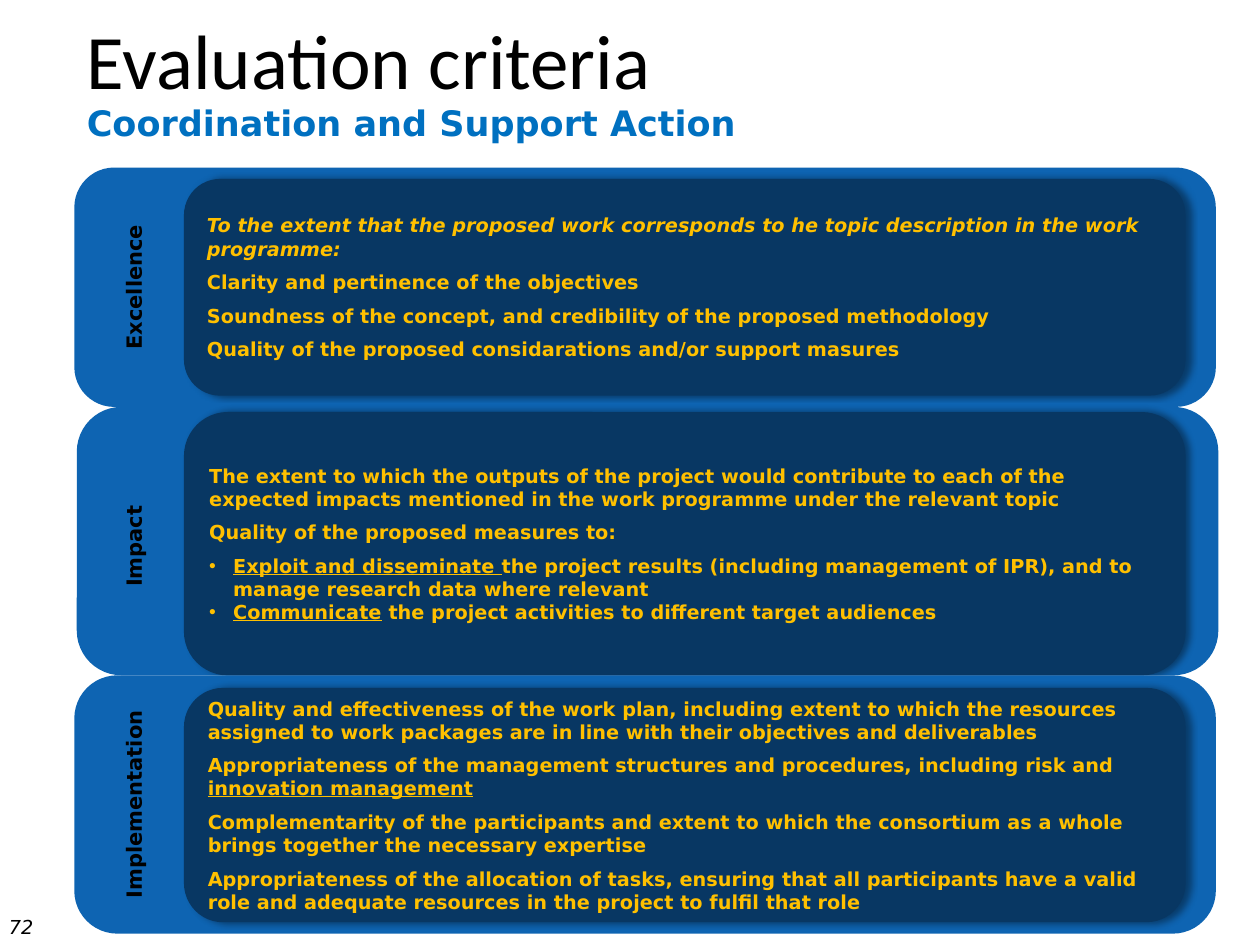
from lxml import etree
from pptx import Presentation
from pptx.dml.color import RGBColor
from pptx.enum.shapes import MSO_SHAPE
from pptx.enum.text import MSO_ANCHOR, PP_ALIGN
from pptx.oxml.ns import qn
from pptx.util import Inches, Pt

ROUNDED = MSO_SHAPE.ROUNDED_RECTANGLE
TOP, MIDDLE, BOTTOM = MSO_ANCHOR.TOP, MSO_ANCHOR.MIDDLE, MSO_ANCHOR.BOTTOM
LEFT, CENTER = PP_ALIGN.LEFT, PP_ALIGN.CENTER

TITLE = "Evaluation criteria"
SUBTITLE = "Coordination and Support Action"
PAGE_NUMBER = "72"

# Each paragraph is (style, text); text between underscores is underlined.
CRITERIA = [
    {"name": "Excellence", "left": 0.59, "height": 1.90,
     "panel_offset": 0.09, "panel_height": 1.72, "label_offset": 0,
     "text": [
         ("italic", "To the extent that the proposed work corresponds to he topic "
                    "description in the work programme:"),
         ("plain", "Clarity and pertinence of the objectives"),
         ("plain", "Soundness of the concept, and credibility of the proposed methodology"),
         ("plain", "Quality of the proposed considarations and/or support masures"),
     ]},
    {"name": "Impact", "left": 0.61, "height": 2.13,
     "panel_offset": 0.04, "panel_height": 2.09, "label_offset": 0.04,
     "text": [
         ("plain", "The extent to which the outputs of the project would contribute to each "
                   "of the expected impacts mentioned in the work programme under the "
                   "relevant topic"),
         ("plain", "Quality of the proposed measures to:"),
         ("first bullet", "_Exploit and disseminate _the project results (including management "
                          "of IPR), and to manage research data where relevant"),
         ("bullet", "_Communicate_ the project activities to different target audiences"),
     ]},
    {"name": "Implementation", "left": 0.59, "height": 2.05,
     "panel_offset": 0.10, "panel_height": 1.86, "label_offset": 0,
     "text": [
         ("plain", "Quality and effectiveness of the work plan, including extent to which the "
                   "resources assigned to work packages are in line with their objectives "
                   "and deliverables"),
         ("plain", "Appropriateness of the management structures and procedures, including "
                   "risk and _innovation management_"),
         ("plain", "Complementarity of the participants and extent to which the consortium as "
                   "a whole brings together the necessary expertise"),
         ("plain", "Appropriateness of the allocation of tasks, ensuring that all participants "
                   "have a valid role and adequate resources in the project to fulfil that role"),
     ]},
]

THEME = {
    "title font": "Calibri", "body font": "DejaVu Sans",
    "title size": 44, "subtitle size": 20, "label size": 12, "body size": 11,
    "ink": "000000", "subtitle": "0070C0", "band": "0E64B2",
    "panel": "083763", "panel text": "FFC000",
}

BANDS_TOP, BAND_WIDTH = 1.33, 9.06
PANEL_LEFT, PANEL_WIDTH = 1.46, 7.95
LABEL_LEFT, LABEL_WIDTH = 0.91, 0.39
BULLET_INDENT = 0.19


def set_font(paragraph, size, color, font="body font", bold=False, italic=False):
    paragraph.font.name = THEME[font]
    paragraph.font.size = Pt(THEME[size])
    paragraph.font.color.rgb = RGBColor.from_string(THEME[color])
    paragraph.font.bold = bold
    paragraph.font.italic = italic


def add_text(slide, box, text, size, color, anchor=TOP, wrap=True, align=LEFT, **style):
    shape = slide.shapes.add_textbox(*map(Inches, box))
    frame = shape.text_frame
    frame.word_wrap = wrap
    frame.vertical_anchor = anchor
    paragraph = frame.paragraphs[0]
    paragraph.text = text
    paragraph.alignment = align
    set_font(paragraph, size, color, **style)
    return shape


def add_rounded(slide, box, fill):
    shape = slide.shapes.add_shape(ROUNDED, *map(Inches, box))
    shape.fill.solid()
    shape.fill.fore_color.rgb = RGBColor.from_string(THEME[fill])
    shape.line.fill.background()
    shape.shadow.inherit = False
    return shape


def add_right_shadow(shape):
    effects = shape._element.spPr.find(qn("a:effectLst"))
    shadow = etree.SubElement(effects, qn("a:outerShdw"), blurRad=str(Pt(4)),
                              dist=str(Pt(3)), dir="0", rotWithShape="0")
    color = etree.SubElement(shadow, qn("a:srgbClr"), val=THEME["ink"])
    etree.SubElement(color, qn("a:alpha"), val="40000")


def add_bullet(paragraph):
    properties = paragraph._p.get_or_add_pPr()
    properties.set("marL", str(Inches(BULLET_INDENT)))
    properties.set("indent", str(-Inches(BULLET_INDENT)))
    etree.SubElement(properties, qn("a:buFont"), typeface="Arial")
    etree.SubElement(properties, qn("a:buChar"), char="•")


def fill_panel(frame, paragraphs):
    frame.word_wrap = True
    frame.vertical_anchor = MIDDLE
    for index, (style, text) in enumerate(paragraphs):
        paragraph = frame.paragraphs[0] if index == 0 else frame.add_paragraph()
        paragraph.alignment = LEFT
        paragraph.space_before = Pt(0 if index == 0 or style == "bullet" else 6)
        if "bullet" in style:
            add_bullet(paragraph)
        set_font(paragraph, "body size", "panel text", bold=True, italic=style == "italic")
        for part, words in enumerate(text.split("_")):
            if words:
                run = paragraph.add_run()
                run.text = words
                if part % 2:
                    run.font.underline = True


def add_criterion(slide, criterion, top):
    height = criterion["height"]
    add_rounded(slide, (criterion["left"], top, BAND_WIDTH, height), "band")
    panel = add_rounded(slide, (PANEL_LEFT, top + criterion["panel_offset"],
                                PANEL_WIDTH, criterion["panel_height"]), "panel")
    add_right_shadow(panel)
    fill_panel(panel.text_frame, criterion["text"])
    label_box = (LABEL_LEFT, top + criterion["label_offset"], LABEL_WIDTH, height)
    label = add_text(slide, label_box, criterion["name"], "label size", "ink",
                     wrap=False, align=CENTER, bold=True)
    label.text_frame._txBody.bodyPr.set("vert", "vert270")


def add_title(slide):
    title = slide.shapes.title
    title.left, title.top, title.width, title.height = map(Inches, (0.59, 0.13, 9, 1.02))
    title.text_frame.vertical_anchor = TOP
    paragraph = title.text_frame.paragraphs[0]
    paragraph.text = TITLE
    paragraph.alignment = LEFT
    paragraph.line_spacing = 0.9
    set_font(paragraph, "title size", "ink", font="title font")


def main():
    presentation = Presentation()
    presentation.slide_width, presentation.slide_height = Inches(10), Inches(7.5)
    slide = presentation.slides.add_slide(presentation.slide_layouts[5])
    add_title(slide)
    add_text(slide, (0.59, 0.76, 9.29, 0.44), SUBTITLE, "subtitle size", "subtitle", bold=True)
    top = BANDS_TOP
    for criterion in CRITERIA:
        add_criterion(slide, criterion, top)
        top += criterion["height"]
    number = add_text(slide, (0, 7.11, 0.49, 0.39), PAGE_NUMBER, "body size", "ink",
                      anchor=BOTTOM, italic=True)
    number.text_frame.margin_left = Inches(0.07)
    presentation.save("out.pptx")


if __name__ == "__main__":
    main()
